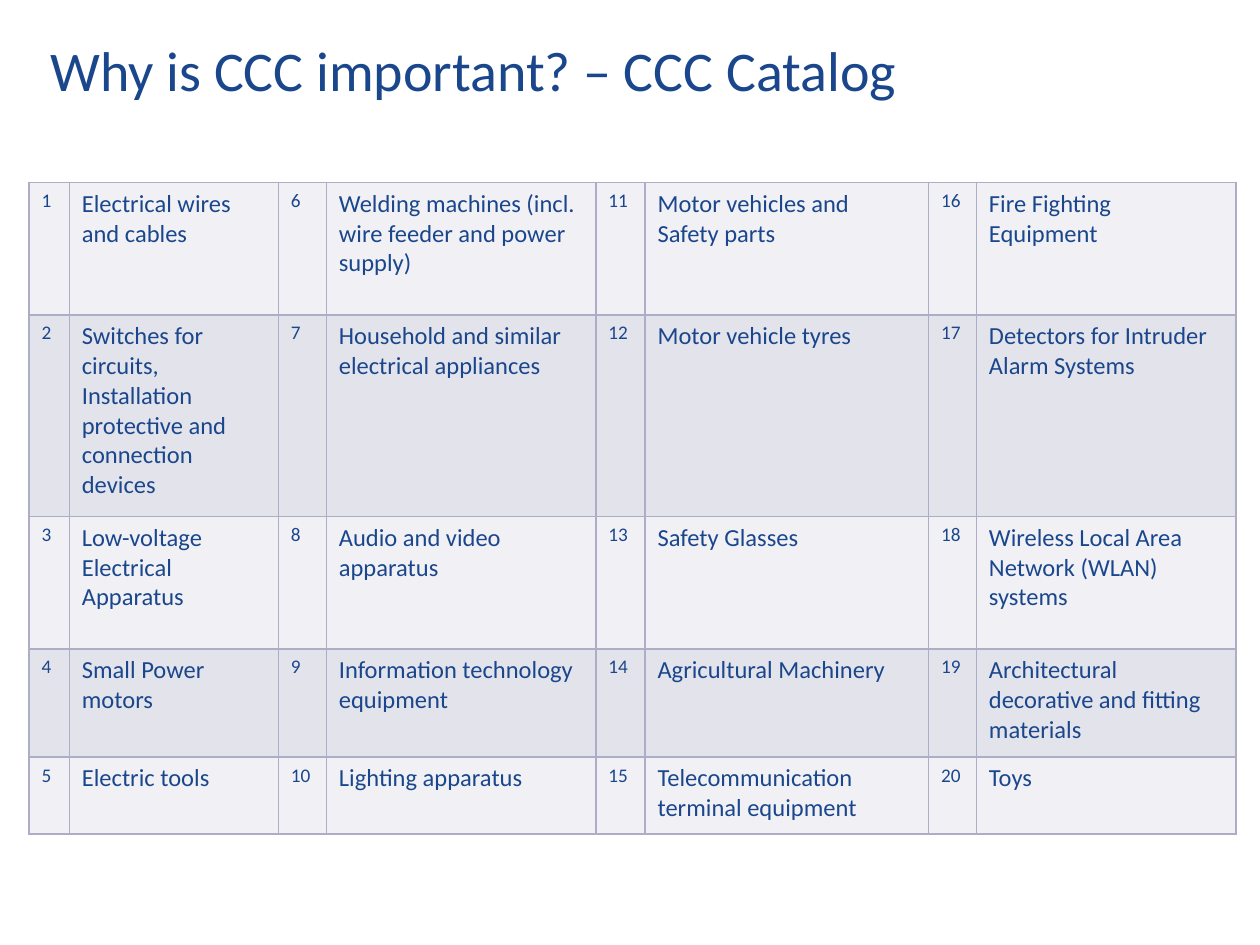
from dataclasses import dataclass

from lxml import etree
from pptx import Presentation
from pptx.dml.color import RGBColor
from pptx.enum import text
from pptx.oxml import ns
from pptx.util import Inches, Pt


@dataclass(frozen=True)
class Theme:
    font: str = "Calibri"
    ink: str = "1A468C"
    border: str = "ADADC7"
    bands: tuple = ("F1F1F5", "E3E3EB")
    title_size: int = 32
    item_size: int = 14
    number_size: int = 11
    border_width: int = 1


THEME = Theme()
TITLE = "Why is CCC important? – CCC Catalog"
CATALOG = [
    "Electrical wires and cables",
    "Switches for circuits, Installation protective and connection devices",
    "Low-voltage Electrical Apparatus",
    "Small Power motors",
    "Electric tools",
    "Welding machines (incl. wire feeder and power supply)",
    "Household and similar electrical appliances",
    "Audio and video apparatus",
    "Information technology equipment",
    "Lighting apparatus",
    "Motor vehicles and Safety parts",
    "Motor vehicle tyres",
    "Safety Glasses",
    "Agricultural Machinery",
    "Telecommunication terminal equipment",
    "Fire Fighting Equipment",
    "Detectors for Intruder Alarm Systems",
    "Wireless Local Area Network (WLAN) systems",
    "Architectural decorative and fitting materials",
    "Toys",
]
COLUMN_WIDTHS = [0.32, 1.66, 0.38, 2.14, 0.39, 2.25, 0.38, 2.06]
ROW_HEIGHTS = [1.05, 1.6, 1.05, 0.86, 0.61]


def set_all(target, values):
    for name, value in values.items():
        setattr(target, name, value)


def style_font(font, size):
    set_all(font, {"name": THEME.font, "size": Pt(size), "bold": False})
    font.color.rgb = RGBColor.from_string(THEME.ink)


def add_title(slide):
    title = slide.shapes.title
    set_all(title, {"left": Inches(0.4), "top": Inches(0.32),
                    "width": Inches(9.2), "height": Inches(0.53)})
    frame = title.text_frame
    set_all(frame, {"margin_left": 0, "margin_right": 0,
                    "margin_top": Inches(0.02), "margin_bottom": Inches(0.02),
                    "vertical_anchor": text.MSO_ANCHOR.MIDDLE,
                    "word_wrap": True, "auto_size": text.MSO_AUTO_SIZE.NONE})
    frame.text = TITLE
    heading = frame.paragraphs[0]
    set_all(heading, {"alignment": text.PP_ALIGN.LEFT, "line_spacing": 0.9})
    style_font(heading.runs[0].font, THEME.title_size)


def add_borders(cell):
    """Draw all four sides; borders must precede the fill in the cell's XML."""
    properties = cell._tc.get_or_add_tcPr()
    for side in ("a:lnL", "a:lnR", "a:lnT", "a:lnB"):
        line = etree.SubElement(properties, ns.qn(side),
                                w=str(Pt(THEME.border_width)))
        fill = etree.SubElement(line, ns.qn("a:solidFill"))
        etree.SubElement(fill, ns.qn("a:srgbClr"), val=THEME.border)


def fill_cell(cell, content, size, band):
    add_borders(cell)
    cell.fill.solid()
    cell.fill.fore_color.rgb = RGBColor.from_string(band)
    cell.text = content
    style_font(cell.text_frame.paragraphs[0].runs[0].font, size)


def add_catalog(slide):
    """Number the items down each pair of columns."""
    row_count = len(ROW_HEIGHTS)
    catalog = slide.shapes.add_table(
        row_count, len(COLUMN_WIDTHS), Inches(0.23), Inches(1.45),
        Inches(sum(COLUMN_WIDTHS)), Inches(sum(ROW_HEIGHTS))).table
    set_all(catalog, {"first_row": False, "horz_banding": False})
    for column, width in zip(catalog.columns, COLUMN_WIDTHS):
        column.width = Inches(width)
    for row, height in zip(catalog.rows, ROW_HEIGHTS):
        row.height = Inches(height)
    for index, item in enumerate(CATALOG):
        pair, row = divmod(index, row_count)
        band = THEME.bands[row % 2]
        fill_cell(catalog.cell(row, 2 * pair), str(index + 1),
                  THEME.number_size, band)
        fill_cell(catalog.cell(row, 2 * pair + 1), item, THEME.item_size, band)


def main():
    deck = Presentation()
    set_all(deck, {"slide_width": Inches(10), "slide_height": Inches(7.5)})
    slide = deck.slides.add_slide(deck.slide_layouts[5])
    add_title(slide)
    add_catalog(slide)
    deck.save("out.pptx")


if __name__ == "__main__":
    main()
